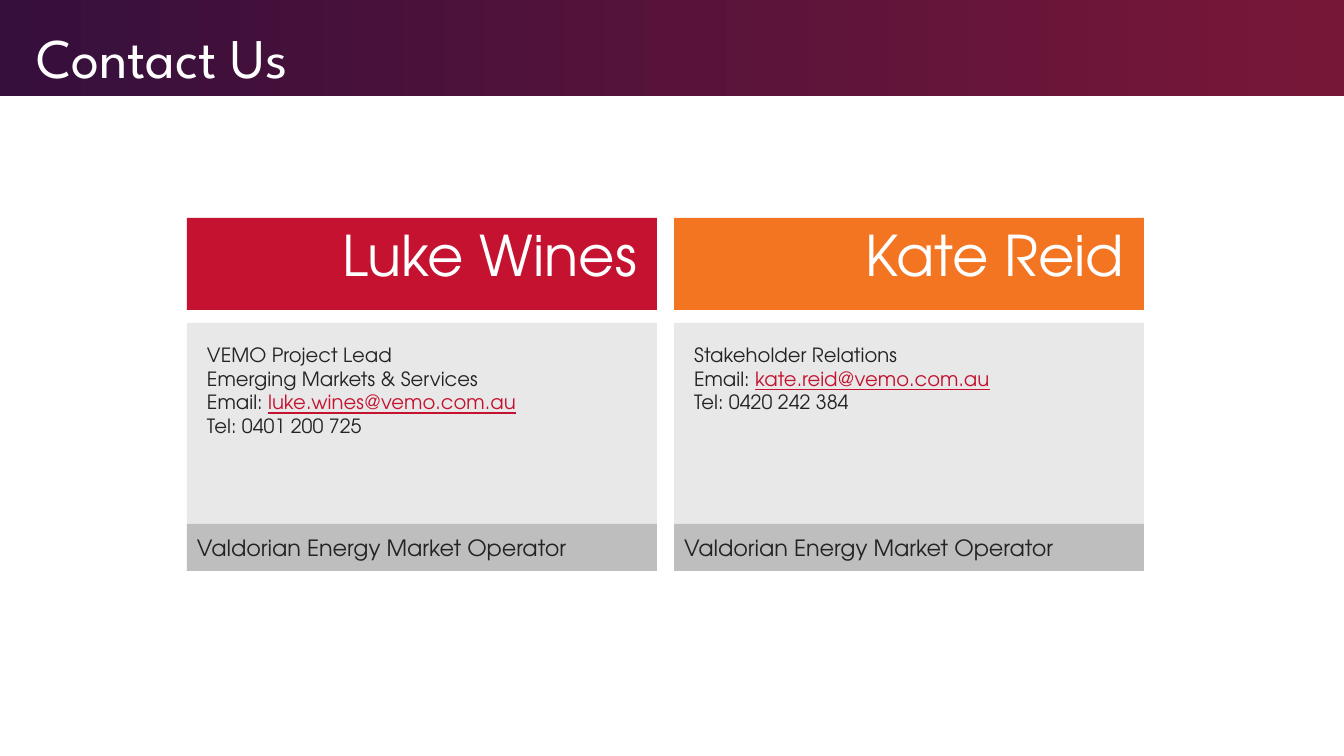
from dataclasses import dataclass

from lxml.etree import SubElement
from pptx import Presentation
from pptx.dml.color import RGBColor
from pptx.enum.shapes import MSO_SHAPE
from pptx.enum.text import MSO_ANCHOR, MSO_AUTO_SIZE, PP_ALIGN
from pptx.oxml.ns import qn
from pptx.util import Pt

EMU_PER_PX = 914400 / 100.8


@dataclass(frozen=True)
class Theme:
    title_font: str = "League Spartan"
    body_font: str = "TeX Gyre Adventor"
    heading_size: int = 40
    detail_size: int = 14
    company_size: int = 16
    white: str = "FFFFFF"
    ink: str = "222324"
    charcoal: str = "1A1A1B"
    red: str = "C41230"
    orange: str = "F37421"
    plum: str = "360F3C"
    wine: str = "771738"


theme = Theme()


def add_box(left, top, width, height, color, insets=(0, 0, 0, 0), opacity=100):
    """Add a borderless rectangle; insets run left, top, right, bottom in px."""
    box = page.shapes.add_shape(
        MSO_SHAPE.RECTANGLE, *[round(n * EMU_PER_PX) for n in (left, top, width, height)])
    box.shadow.inherit = False
    box.line.fill.background()
    box.fill.solid()
    box.fill.fore_color.rgb = RGBColor.from_string(color)
    if opacity < 100:
        color_node = box.element.spPr.find(qn("a:solidFill"))[0]
        SubElement(color_node, qn("a:alpha"), val=str(opacity * 1000))
    frame = box.text_frame
    frame.word_wrap = True
    frame.vertical_anchor = MSO_ANCHOR.TOP
    frame.margin_left, frame.margin_top, frame.margin_right, frame.margin_bottom = [
        round(n * EMU_PER_PX) for n in insets]
    frame.paragraphs[0].alignment = PP_ALIGN.LEFT
    return box


def add_span(para, text, size, color, font=theme.body_font, underline=None):
    span = para.add_run()
    span.text = text
    span.font.name = font
    span.font.size = Pt(size)
    span.font.color.rgb = RGBColor.from_string(color)
    span.font.underline = underline


deck = Presentation()
deck.slide_width = round(1344 * EMU_PER_PX)
deck.slide_height = round(756 * EMU_PER_PX)
page = deck.slides.add_slide(deck.slide_layouts[5])

# Gradient header behind the title
title = page.shapes.title
header = add_box(0, 0, 1344, 96, theme.plum)
header.fill.gradient()
header.fill.gradient_angle = 0
for stop, position, color in zip(header.fill.gradient_stops, (0, 0.99), (theme.plum, theme.wine)):
    stop.position = position
    stop.color.rgb = RGBColor.from_string(color)
title.element.addprevious(header.element)

# Title
title.left, title.top, title.width, title.height = [
    round(n * EMU_PER_PX) for n in (26, 4, 992, 92)]
title.text_frame.vertical_anchor = MSO_ANCHOR.BOTTOM
title.text_frame.auto_size = MSO_AUTO_SIZE.NONE
title_para = title.text_frame.paragraphs[0]
title_para.alignment = PP_ALIGN.LEFT
title_para.line_spacing = 0.9
add_span(title_para, "Contact Us", theme.heading_size, theme.white, theme.title_font)

# Contact cards: name, accent, role lines, email, telephone
contacts = [
    ("Luke Wines", theme.red, ["VEMO Project Lead", "Emerging Markets & Services"],
     "luke.wines@vemo.com.au", "0401 200 725"),
    ("Kate Reid", theme.orange, ["Stakeholder Relations"],
     "kate.reid@vemo.com.au", "0420 242 384"),
]
card_left, card_width, card_gap = 187, 470, 17

for index, (name, accent, roles, email, phone) in enumerate(contacts):
    left = card_left + index * (card_width + card_gap)

    # Details panel
    panel = add_box(left, 323, card_width, 248, theme.ink, (20, 20, 20, 20), opacity=10)
    lines = [(role, "") for role in roles] + [("Email: ", email), (f"Tel: {phone}", "")]
    for row, (text, address) in enumerate(lines):
        para = panel.text_frame.add_paragraph() if row else panel.text_frame.paragraphs[0]
        para.alignment = PP_ALIGN.LEFT
        add_span(para, text, theme.detail_size, theme.ink)
        if address:
            add_span(para, address, theme.detail_size, theme.red, underline=True)

    # Name banner
    banner = add_box(left, 218, card_width, 92, accent, (20, 10, 20, 20))
    para = banner.text_frame.paragraphs[0]
    para.alignment = PP_ALIGN.RIGHT
    para.line_spacing = 0.9
    para.space_after = Pt(2)
    add_span(para, name, theme.heading_size, theme.white)

    # Company strip
    strip = add_box(left, 524, card_width, 47, theme.charcoal, (10, 10, 10, 10), opacity=20)
    add_span(strip.text_frame.paragraphs[0], "Valdorian Energy Market Operator",
             theme.company_size, theme.ink)

deck.save("out.pptx")
